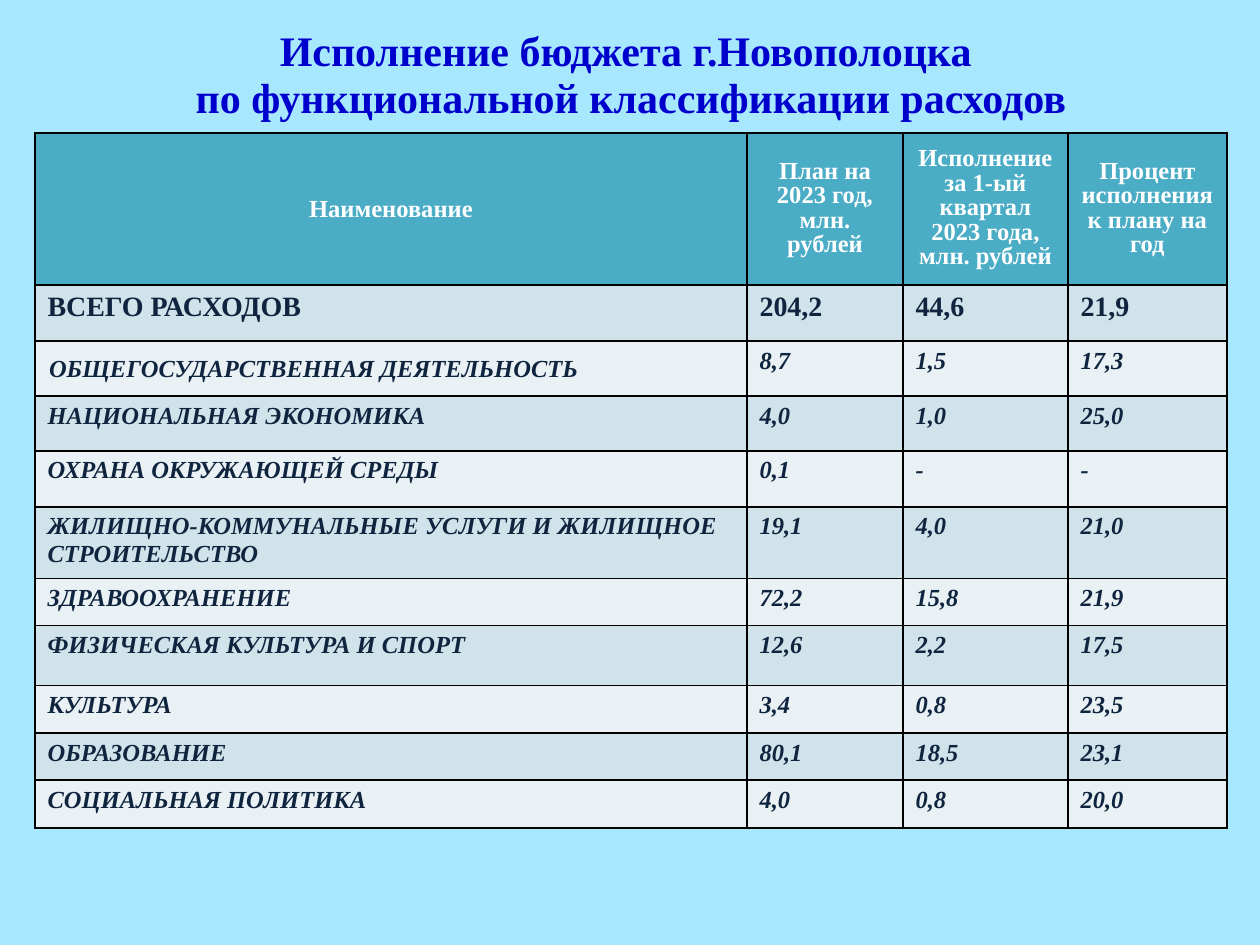
from dataclasses import dataclass

from lxml import etree
from pptx import Presentation
from pptx.dml.color import RGBColor
from pptx.enum import text
from pptx.oxml.ns import qn
from pptx.util import Emu, Pt

PX = 914400 // 126
FONT = "Times New Roman"
BLACK, WHITE, NAVY, BLUE = "000000", "FFFFFF", "0F243E", "0000CC"
SKY, TEAL, BANDS = "A7E8FF", "4BACC6", ("E9F1F5", "D0E3EA")
COL_WIDTHS = (712, 156, 165, 159)
HEADERS = (
    "Наименование",
    "План на 2023 год, млн. рублей",
    "Исполнение за 1-ый квартал 2023 года, млн. рублей",
    "Процент исполнения к плану на год",
)


@dataclass
class Expense:
    name: str
    plan: str
    actual: str
    percent: str
    height: int


@dataclass
class Style:
    size: int
    color: str
    italic: bool = False
    align: text.PP_ALIGN = text.PP_ALIGN.LEFT
    spacing: int | None = None


TITLE = Style(24, BLUE, align=text.PP_ALIGN.CENTER, spacing=27)
HEAD_NAME = Style(14, WHITE, align=text.PP_ALIGN.CENTER)
HEAD = Style(14, WHITE, align=text.PP_ALIGN.CENTER, spacing=14)
TOTAL = Style(16, NAVY)
ITEM = Style(14, NAVY, italic=True)

EXPENSES = (
    Expense("ВСЕГО РАСХОДОВ", "204,2", "44,6", "21,9", 56),
    Expense("ОБЩЕГОСУДАРСТВЕННАЯ ДЕЯТЕЛЬНОСТЬ", "8,7", "1,5", "17,3", 55),
    Expense("НАЦИОНАЛЬНАЯ ЭКОНОМИКА", "4,0", "1,0", "25,0", 55),
    Expense("ОХРАНА ОКРУЖАЮЩЕЙ СРЕДЫ", "0,1", "-", "-", 56),
    Expense("ЖИЛИЩНО-КОММУНАЛЬНЫЕ УСЛУГИ И ЖИЛИЩНОЕ СТРОИТЕЛЬСТВО",
            "19,1", "4,0", "21,0", 67),
    Expense("ЗДРАВООХРАНЕНИЕ", "72,2", "15,8", "21,9", 47),
    Expense("ФИЗИЧЕСКАЯ КУЛЬТУРА И СПОРТ", "12,6", "2,2", "17,5", 60),
    Expense("КУЛЬТУРА", "3,4", "0,8", "23,5", 48),
    Expense("ОБРАЗОВАНИЕ", "80,1", "18,5", "23,1", 47),
    Expense("СОЦИАЛЬНАЯ ПОЛИТИКА", "4,0", "0,8", "20,0", 48),
)
HEAD_HEIGHT = 152


def px(n: int) -> Emu:
    return Emu(n * PX)


def rgb(color: str) -> RGBColor:
    return RGBColor.from_string(color)


def write(tf, words: str, style: Style) -> None:
    p = tf.paragraphs[0]
    p.text = words
    p.alignment = style.align
    if style.spacing:
        p.line_spacing = Pt(style.spacing)
    for r in p.runs:
        r.font.name = FONT
        r.font.size = Pt(style.size)
        r.font.bold = True
        r.font.italic = style.italic
        r.font.color.rgb = rgb(style.color)


def add_borders(cell, color: str) -> None:
    tc_pr = cell._tc.get_or_add_tcPr()
    for side in ("a:lnL", "a:lnR", "a:lnT", "a:lnB"):
        ln = etree.SubElement(tc_pr, qn(side), w=str(Pt(1)))
        fill = etree.SubElement(ln, qn("a:solidFill"))
        etree.SubElement(fill, qn("a:srgbClr"), val=color)


def fill_cell(cell, words: str, style: Style, color: str) -> None:
    add_borders(cell, BLACK)
    cell.fill.solid()
    cell.fill.fore_color.rgb = rgb(color)
    write(cell.text_frame, words, style)


def add_title(slide) -> None:
    sp = slide.shapes.add_textbox(px(64), px(16), px(1134), px(117))
    tf = sp.text_frame
    tf.word_wrap = True
    tf.vertical_anchor = text.MSO_ANCHOR.MIDDLE
    write(tf, "Исполнение бюджета г.Новополоцка \v"
              "по функциональной классификации расходов", TITLE)


def add_expense_table(slide) -> None:
    heights = [HEAD_HEIGHT] + [e.height for e in EXPENSES]
    table = slide.shapes.add_table(
        len(heights), len(COL_WIDTHS), px(35), px(133),
        px(sum(COL_WIDTHS)), px(sum(heights))).table
    for column, width in zip(table.columns, COL_WIDTHS):
        column.width = px(width)
    for row, height in zip(table.rows, heights):
        row.height = px(height)

    # Header row
    for c, words in enumerate(HEADERS):
        cell = table.cell(0, c)
        fill_cell(cell, words, HEAD if c else HEAD_NAME, TEAL)
        cell.vertical_anchor = text.MSO_ANCHOR.MIDDLE

    # Total and expense rows in alternating bands
    for r, e in enumerate(EXPENSES, start=1):
        for c, words in enumerate((e.name, e.plan, e.actual, e.percent)):
            fill_cell(table.cell(r, c), words, TOTAL if r == 1 else ITEM, BANDS[r % 2])

    # The first expense name is centred vertically
    first = table.cell(2, 0)
    first.vertical_anchor = text.MSO_ANCHOR.MIDDLE
    first.margin_left = px(14)
    first.margin_top = px(1)
    first.margin_bottom = 0


def main() -> None:
    prs = Presentation()
    prs.slide_width, prs.slide_height = px(1260), px(945)
    slide = prs.slides.add_slide(prs.slide_layouts[6])
    slide.background.fill.solid()
    slide.background.fill.fore_color.rgb = rgb(SKY)
    add_title(slide)
    add_expense_table(slide)
    prs.save("out.pptx")


if __name__ == "__main__":
    main()
